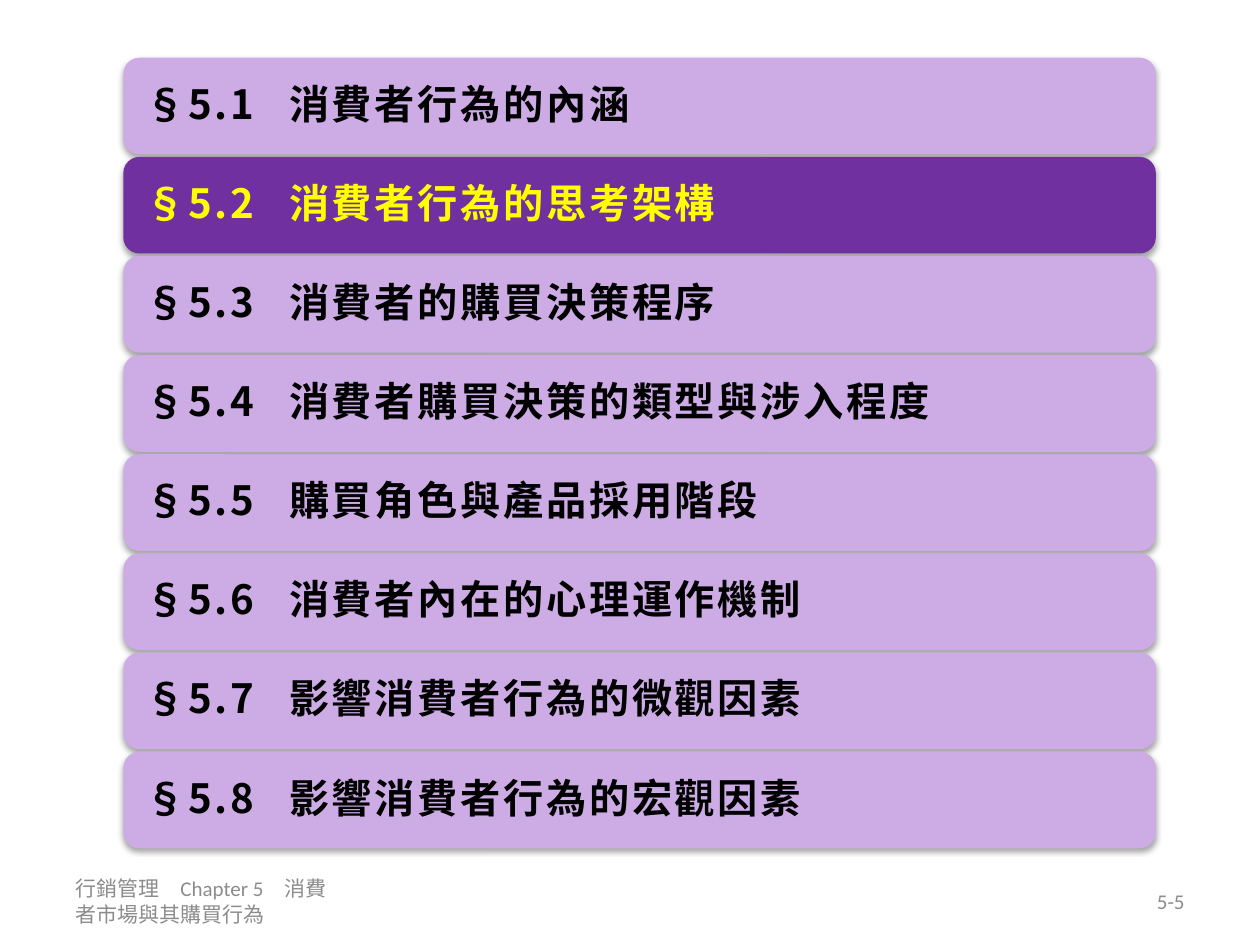
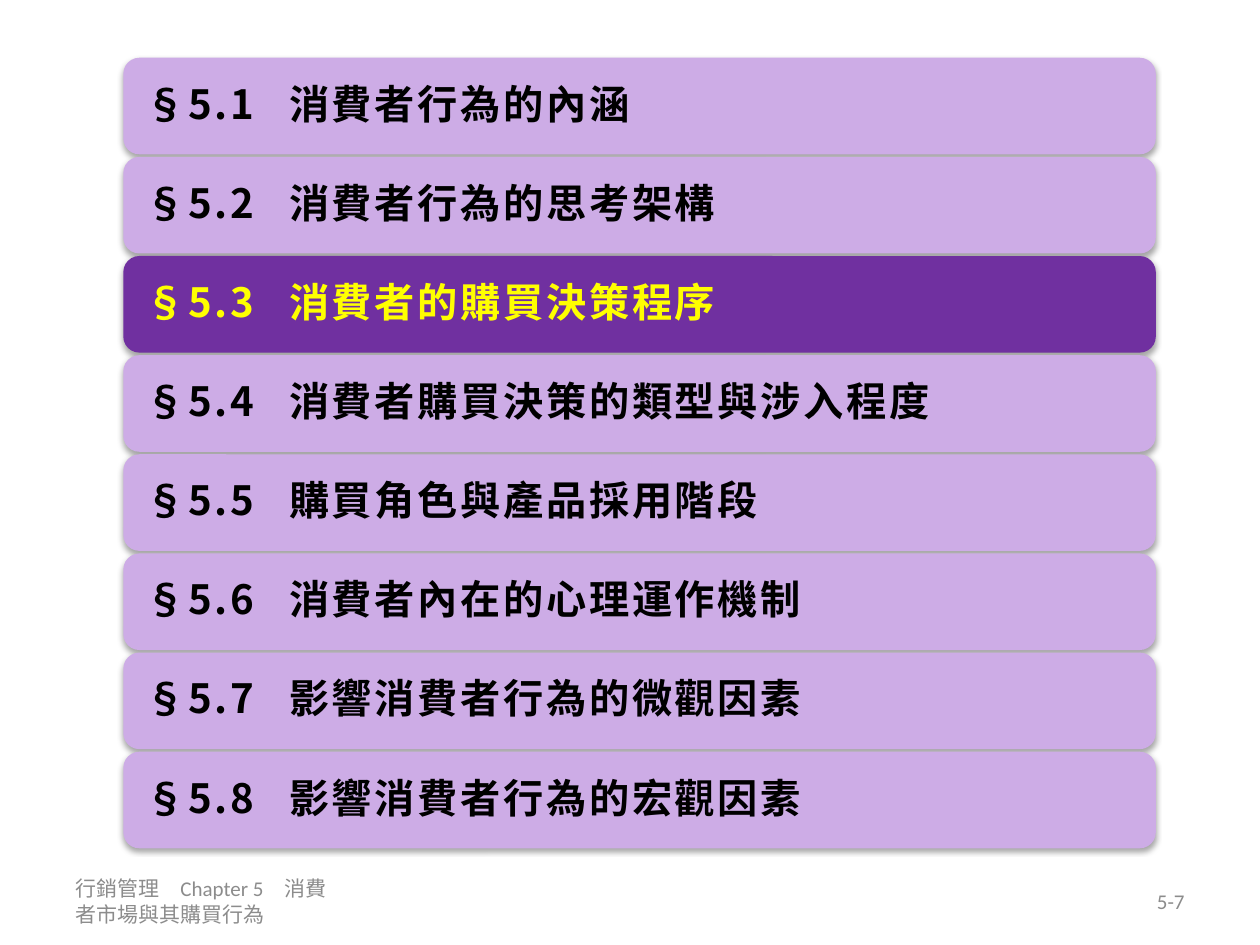
"""Build the two chapter 5 agenda slides, each highlighting its current section."""
from lxml.etree import SubElement
from pptx import Presentation
from pptx.dml.color import RGBColor
from pptx.enum.shapes import MSO_SHAPE as SHAPE
from pptx.enum.text import MSO_ANCHOR as ANCHOR, PP_ALIGN as ALIGN
from pptx.oxml.ns import qn
from pptx.util import Pt

SECTIONS = [
    "消費者行為的內涵",
    "消費者行為的思考架構",
    "消費者的購買決策程序",
    "消費者購買決策的類型與涉入程度",
    "購買角色與產品採用階段",
    "消費者內在的心理運作機制",
    "影響消費者行為的微觀因素",
    "影響消費者行為的宏觀因素",
]
SLIDES = [{"current": 2, "page": "5-5"}, {"current": 3, "page": "5-7"}]
FOOTER = "行銷管理　Chapter 5　消費者市場與其購買行為"

LILAC = RGBColor(0xCD, 0xAC, 0xE6)
PURPLE = RGBColor(0x70, 0x30, 0xA0)
YELLOW = RGBColor(0xFF, 0xFF, 0x00)
BLACK = RGBColor(0, 0, 0)
GRAY = RGBColor(0x8C, 0x8C, 0x8C)
CJK = "Noto Sans CJK SC"

BAR_LEFT, BAR_TOP, BAR_W, BAR_H, BAR_STEP = 70.5, 33, 590, 55.2, 56.65
FOOT_TOP, FOOT_W, FOOT_H = 500.5, 168, 28.8
FOOT_LEFT, PAGE_LEFT = 36, 516
TITLE_TAB = 82

BAR_FRAME = {"margin_left": Pt(10), "margin_right": Pt(10), "margin_top": Pt(10),
             "margin_bottom": Pt(10), "vertical_anchor": ANCHOR.MIDDLE, "word_wrap": True}
BAR_PARA = {"alignment": ALIGN.LEFT, "line_spacing": 0.9, "space_after": Pt(8)}
BAR_FONT = {"name": CJK, "size": Pt(23), "bold": True}
FOOT_FRAME = {"vertical_anchor": ANCHOR.MIDDLE, "word_wrap": True}
FOOT_FONT = {"name": "Calibri", "size": Pt(12)}


def apply(target, values):
    for name, value in values.items():
        setattr(target, name, value)


def write(p, text, font, color):
    r = p.add_run()
    r.text = text
    r.font.color.rgb = color
    apply(r.font, font)
    rPr = r.font._element
    SubElement(rPr, qn("a:ea"), typeface=CJK)
    return rPr


def add_shadow(sp):
    sp.shadow.inherit = False
    effects = sp._element.spPr.find(qn("a:effectLst"))
    shadow = SubElement(effects, qn("a:outerShdw"), blurRad=str(Pt(3.1)),
                        dist=str(Pt(1.8)), dir="5400000", rotWithShape="0")
    color = SubElement(shadow, qn("a:srgbClr"), val=str(BLACK))
    SubElement(color, qn("a:alpha"), val="35000")


def add_section(s, number, title, is_current):
    top = BAR_TOP + (number - 1) * BAR_STEP
    sp = s.shapes.add_shape(SHAPE.ROUNDED_RECTANGLE,
                            Pt(BAR_LEFT), Pt(top), Pt(BAR_W), Pt(BAR_H))
    sp.fill.solid()
    sp.fill.fore_color.rgb = PURPLE if is_current else LILAC
    sp.line.fill.background()
    add_shadow(sp)
    tf = sp.text_frame
    apply(tf, BAR_FRAME)
    p = tf.paragraphs[0]
    tabs = SubElement(p._p.get_or_add_pPr(), qn("a:tabLst"))
    SubElement(tabs, qn("a:tab"), pos=str(Pt(TITLE_TAB)), algn="l")
    apply(p, BAR_PARA)
    rPr = write(p, f"§5.{number}\t{title}", BAR_FONT, YELLOW if is_current else BLACK)
    rPr.set("spc", "150")


def add_footer(s, left, text, align):
    tf = s.shapes.add_textbox(Pt(left), Pt(FOOT_TOP), Pt(FOOT_W), Pt(FOOT_H)).text_frame
    apply(tf, FOOT_FRAME)
    p = tf.paragraphs[0]
    p.alignment = align
    write(p, text, FOOT_FONT, GRAY)


def main():
    prs = Presentation()
    prs.slide_width, prs.slide_height = Pt(720), Pt(540)
    for slide in SLIDES:
        s = prs.slides.add_slide(prs.slide_layouts[6])
        add_footer(s, FOOT_LEFT, FOOTER, ALIGN.LEFT)
        add_footer(s, PAGE_LEFT, slide["page"], ALIGN.RIGHT)
        for number, title in enumerate(SECTIONS, 1):
            add_section(s, number, title, number == slide["current"])
    prs.save("out.pptx")


if __name__ == "__main__":
    main()
